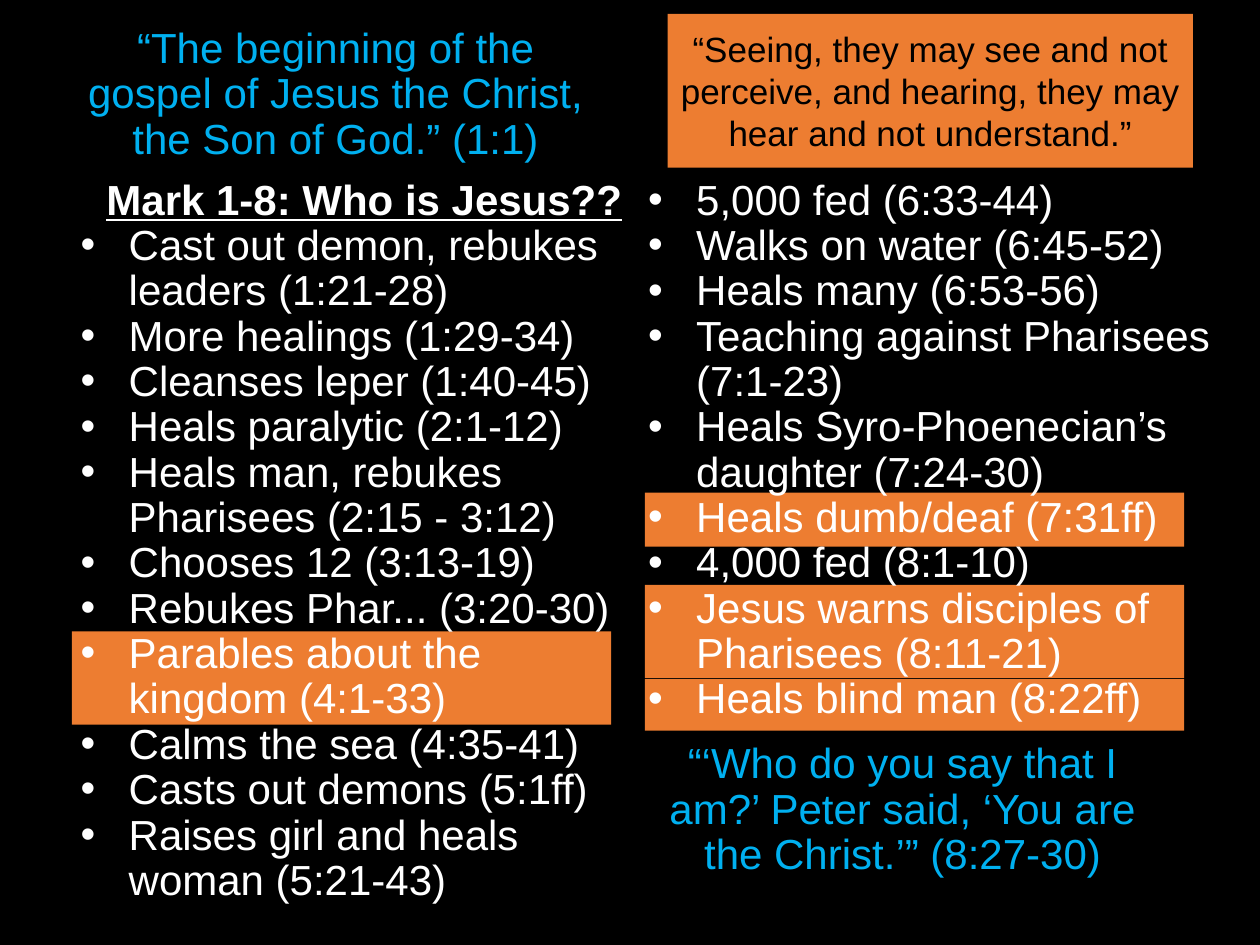
from dataclasses import dataclass

from lxml import etree
from pptx import Presentation
from pptx.dml.color import RGBColor
from pptx.enum.shapes import MSO_SHAPE
from pptx.enum.text import MSO_ANCHOR, MSO_AUTO_SIZE, PP_ALIGN
from pptx.oxml.ns import qn
from pptx.util import Cm, Pt

RECT = MSO_SHAPE.RECTANGLE
TOP, MIDDLE = MSO_ANCHOR.TOP, MSO_ANCHOR.MIDDLE
LEFT, CENTER = PP_ALIGN.LEFT, PP_ALIGN.CENTER
FIXED = MSO_AUTO_SIZE.NONE


@dataclass(frozen=True)
class Theme:
    font: str = "Arial"
    black: str = "000000"
    white: str = "FFFFFF"
    orange: str = "ED7D31"
    blue: str = "00B0F0"
    large: int = 24
    small: int = 20
    tight: float = 0.9
    indent: float = 0.97


THEME = Theme()

HEADING = "Mark 1-8: Who is Jesus??"
EVENTS = [
    "Cast out demon, rebukes leaders (1:21-28)",
    "More healings (1:29-34)",
    "Cleanses leper (1:40-45)",
    "Heals paralytic (2:1-12)",
    "Heals man, rebukes Pharisees (2:15 - 3:12)",
    "Chooses 12 (3:13-19)",
    "Rebukes Phar... (3:20-30)",
    "Parables about the kingdom (4:1-33)",
    "Calms the sea (4:35-41)",
    "Casts out demons (5:1ff)",
    "Raises girl and heals woman (5:21-43)",
    "5,000 fed (6:33-44)",
    "Walks on water (6:45-52)",
    "Heals many (6:53-56)",
    "Teaching against Pharisees (7:1-23)",
    "Heals Syro-Phoenecian’s daughter (7:24-30)",
    "Heals dumb/deaf (7:31ff)",
    "4,000 fed (8:1-10)",
    "Jesus warns disciples of Pharisees (8:11-21)",
    "Heals blind man (8:22ff)",
]
OPENING = "“The beginning of the gospel of Jesus the Christ, the Son of God.” (1:1)"
SEEING = ("“Seeing, they may see and not perceive, and hearing, "
          "they may hear and not understand.”")
ANSWER = "“‘Who do you say that I am?’ Peter said, ‘You are the Christ.’” (8:27-30)"

BAR_WIDTH = 10.87
BARS = [(13, 9.93, 1.09), (13, 11.79, 1.88), (13, 13.69, 1.04), (1.45, 12.73, 1.88)]


def write(par, text, color=THEME.white, size=THEME.large, align=CENTER,
          spacing=THEME.tight, bold=False, line=False, bullet=False):
    """Fill one paragraph with formatted text."""
    props = par._p.get_or_add_pPr()
    indent = Cm(THEME.indent) if bullet else 0
    props.set("marL", str(indent))
    props.set("indent", str(-indent))
    if bullet:
        etree.SubElement(props, qn("a:buFont"), typeface=THEME.font)
        etree.SubElement(props, qn("a:buChar"), char="•")
    else:
        etree.SubElement(props, qn("a:buNone"))
    par.alignment = align
    par.line_spacing = spacing
    par.space_before = par.space_after = Pt(0)
    run = par.add_run()
    run.text = text
    font = run.font
    font.name, font.size = THEME.font, Pt(size)
    font.bold, font.underline = bold, line
    font.color.rgb = RGBColor.from_string(color)


class Deck:
    """Hold the theme and the current slide."""

    def __init__(self, theme):
        self.theme = theme
        self.file = Presentation()
        self.file.slide_width, self.file.slide_height = Cm(25.4), Cm(19.05)
        self.slide = self.file.slides.add_slide(self.file.slide_layouts[1])
        self.shapes = self.slide.shapes
        self.paint(self.slide.background.fill, theme.black)

    def paint(self, fill, color):
        """Give a fill one solid colour."""
        fill.solid()
        fill.fore_color.rgb = RGBColor.from_string(color)

    def bar(self, *box):
        """Draw a plain orange block."""
        shape = self.shapes.add_shape(RECT, *map(Cm, box))
        shape.shadow.inherit = False
        self.paint(shape.fill, self.theme.orange)
        shape.line.fill.background()
        return shape

    def frame(self, shape, anchor=MIDDLE):
        """Set up a wrapped text frame of fixed size."""
        frame = shape.text_frame
        frame.word_wrap = True
        frame.auto_size = FIXED
        frame.vertical_anchor = anchor
        return frame

    def panel(self, text, *box):
        """Draw an orange block that holds a quote."""
        frame = self.frame(self.bar(*box))
        write(frame.paragraphs[0], text, color=self.theme.black,
              size=self.theme.small, spacing=1.0)

    def quote(self, text, *box):
        """Add a blue quote in a text box."""
        frame = self.frame(self.shapes.add_textbox(*map(Cm, box)))
        write(frame.paragraphs[0], text, color=self.theme.blue)

    def place(self, holder, *box):
        """Move a placeholder and bring it to the front."""
        holder.left, holder.top, holder.width, holder.height = map(Cm, box)
        self.shapes._spTree.append(holder._element)

    def list(self, heading, items, *box):
        """Fill the body with a heading and bullets in two columns."""
        body = self.slide.placeholders[1]
        self.place(body, *box)
        frame = self.frame(body, TOP)
        frame._txBody.bodyPr.set("numCol", "2")
        write(frame.paragraphs[0], heading, bold=True, line=True)
        for item in items:
            write(frame.add_paragraph(), item, align=LEFT, bullet=True)

    def title(self, text, *box):
        """Fill the title with a blue quote."""
        title = self.shapes.title
        self.place(title, *box)
        write(self.frame(title).paragraphs[0], text, color=self.theme.blue)


def main():
    """Build and save the slide."""
    deck = Deck(THEME)
    for left, top, height in BARS:
        deck.bar(left, top, BAR_WIDTH, height)
    deck.panel(SEEING, 13.46, 0.28, 10.59, 3.1)
    deck.quote(ANSWER, 12.85, 14.78, 10.69, 3.12)
    deck.list(HEADING, EVENTS, 1.37, 3.48, 23.39, 15.04)
    deck.title(OPENING, 1.42, 0.36, 10.69, 3.12)
    deck.file.save("out.pptx")


if __name__ == "__main__":
    main()
